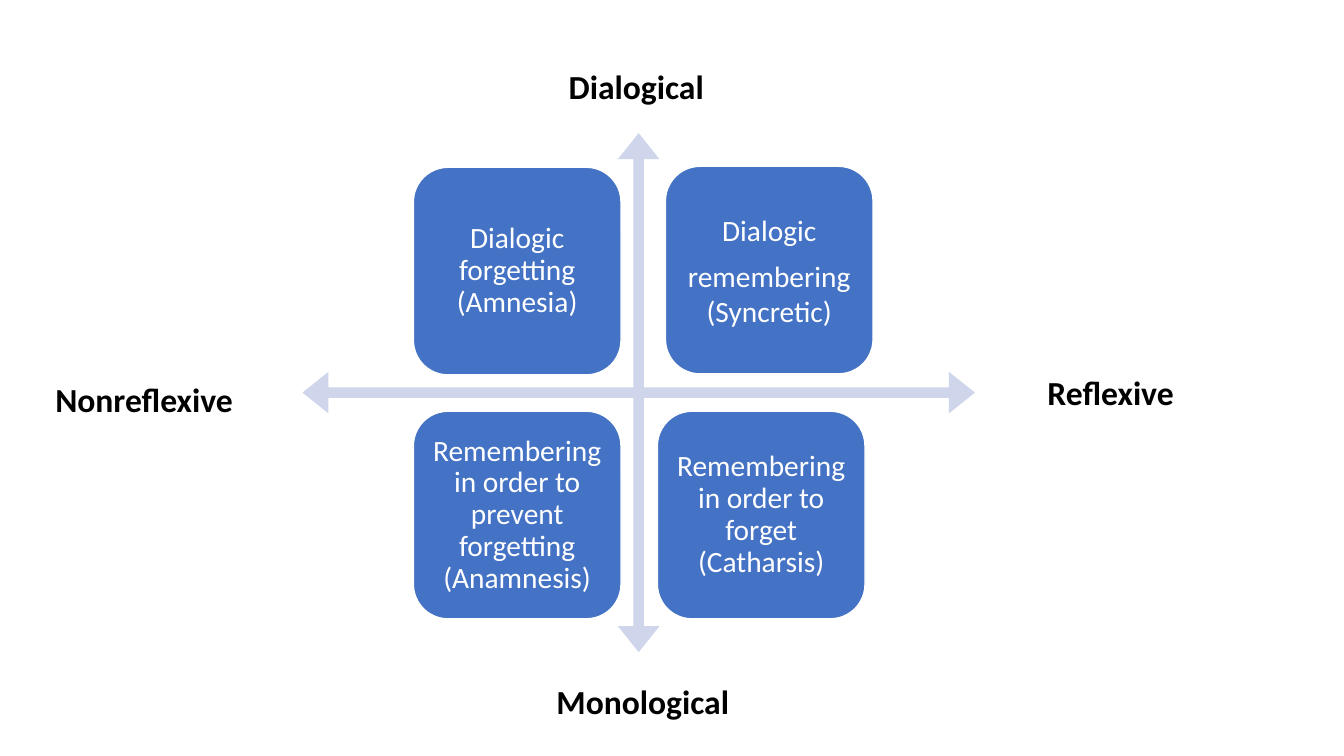
import dataclasses

import pptx
import pptx.dml.color
import pptx.enum.shapes
import pptx.enum.text
import pptx.shapes.autoshape
import pptx.slide
import pptx.text.text
import pptx.util

Inches = pptx.util.Inches
Pt = pptx.util.Pt
Anchor = pptx.enum.text.MSO_ANCHOR
Align = pptx.enum.text.PP_ALIGN
ShapeKind = pptx.enum.shapes.MSO_SHAPE

FONT = "Calibri"
BLACK = "000000"
WHITE = "FFFFFF"
QUADRANT_BLUE = "4472C4"
ARROW_BLUE = "CFD5EA"
QUADRANT_SIZE = 2.06
QUADRANT_INSET = 0.08


@dataclasses.dataclass(frozen=True)
class AxisLabel:
    text: str
    left: float
    top: float
    width: float
    height: float
    anchor: Anchor
    is_title: bool = False


@dataclasses.dataclass(frozen=True)
class Quadrant:
    paragraphs: tuple[str, ...]
    left: float
    top: float
    line_spacing: float = 0.9


AXIS_LABELS = (
    AxisLabel("Dialogical", 5.54, 0.66, 2.65, 0.43, Anchor.MIDDLE, True),
    AxisLabel("Reflexive", 10.29, 3.7, 1.62, 0.44, Anchor.BOTTOM),
    AxisLabel("Nonreflexive", 0.45, 3.75, 2.14, 0.55, Anchor.TOP),
    AxisLabel("Monological", 5.42, 6.7, 1.96, 0.51, Anchor.BOTTOM),
)

QUADRANTS = (
    Quadrant(("Dialogic forgetting (Amnesia)",), 4.1, 1.66),
    Quadrant(("Dialogic", "remembering (Syncretic)"), 6.6, 1.65, 1.0),
    Quadrant(("Remembering in order to prevent forgetting (Anamnesis)",), 4.1, 4.08),
    Quadrant(("Remembering in order to forget (Catharsis)",), 6.52, 4.08),
)


def colour(value: str) -> pptx.dml.color.RGBColor:
    return pptx.dml.color.RGBColor.from_string(value)


def add_run(
    paragraph: pptx.text.text._Paragraph, text: str, size: float, value: str, bold: bool
) -> None:
    run = paragraph.add_run()
    run.text = text
    run.font.name = FONT
    run.font.size = Pt(size)
    run.font.bold = bold
    run.font.color.rgb = colour(value)


def add_filled_shape(
    slide: pptx.slide.Slide,
    kind: ShapeKind,
    left: float,
    top: float,
    width: float,
    height: float,
    fill: str,
) -> pptx.shapes.autoshape.Shape:
    shape = slide.shapes.add_shape(
        kind, Inches(left), Inches(top), Inches(width), Inches(height)
    )
    shape.shadow.inherit = False
    shape.fill.solid()
    shape.fill.fore_color.rgb = colour(fill)
    return shape


def draw_axis_label(slide: pptx.slide.Slide, label: AxisLabel) -> None:
    position = [
        Inches(length) for length in (label.left, label.top, label.width, label.height)
    ]
    if label.is_title:
        shape = slide.shapes.title
        shape.left, shape.top, shape.width, shape.height = position
    else:
        shape = slide.shapes.add_textbox(*position)
    frame = shape.text_frame
    frame.word_wrap = True
    frame.auto_size = pptx.enum.text.MSO_AUTO_SIZE.NONE
    frame.vertical_anchor = label.anchor
    paragraph = frame.paragraphs[0]
    paragraph.alignment = Align.LEFT
    paragraph.line_spacing = 0.9
    add_run(paragraph, label.text, 24, BLACK, True)


def draw_axes(slide: pptx.slide.Slide) -> None:
    arrow = add_filled_shape(
        slide, ShapeKind.QUAD_ARROW, 3, 1.32, 6.67, 5.15, ARROW_BLUE
    )
    arrow.line.fill.background()
    for index, adjustment in enumerate((0.02, 0.04, 0.05)):
        arrow.adjustments[index] = adjustment


def draw_quadrant(slide: pptx.slide.Slide, quadrant: Quadrant) -> None:
    shape = add_filled_shape(
        slide,
        ShapeKind.ROUNDED_RECTANGLE,
        quadrant.left,
        quadrant.top,
        QUADRANT_SIZE,
        QUADRANT_SIZE,
        QUADRANT_BLUE,
    )
    shape.line.color.rgb = colour(WHITE)
    shape.line.width = Pt(1)
    frame = shape.text_frame
    frame.word_wrap = True
    frame.vertical_anchor = Anchor.MIDDLE
    frame.margin_left = frame.margin_right = Inches(QUADRANT_INSET)
    frame.margin_top = frame.margin_bottom = Inches(QUADRANT_INSET)
    for index, text in enumerate(quadrant.paragraphs):
        paragraph = frame.add_paragraph() if index else frame.paragraphs[0]
        paragraph.alignment = Align.CENTER
        paragraph.line_spacing = quadrant.line_spacing
        if index < len(quadrant.paragraphs) - 1:
            paragraph.space_after = Pt(7.35)
        add_run(paragraph, text, 21, WHITE, False)


def main() -> None:
    presentation = pptx.Presentation()
    presentation.slide_width = Inches(13.33)
    presentation.slide_height = Inches(7.5)
    slide = presentation.slides.add_slide(presentation.slide_layouts[5])
    for label in AXIS_LABELS:
        draw_axis_label(slide, label)
    draw_axes(slide)
    for quadrant in QUADRANTS:
        draw_quadrant(slide, quadrant)
    presentation.save("out.pptx")


if __name__ == "__main__":
    main()
